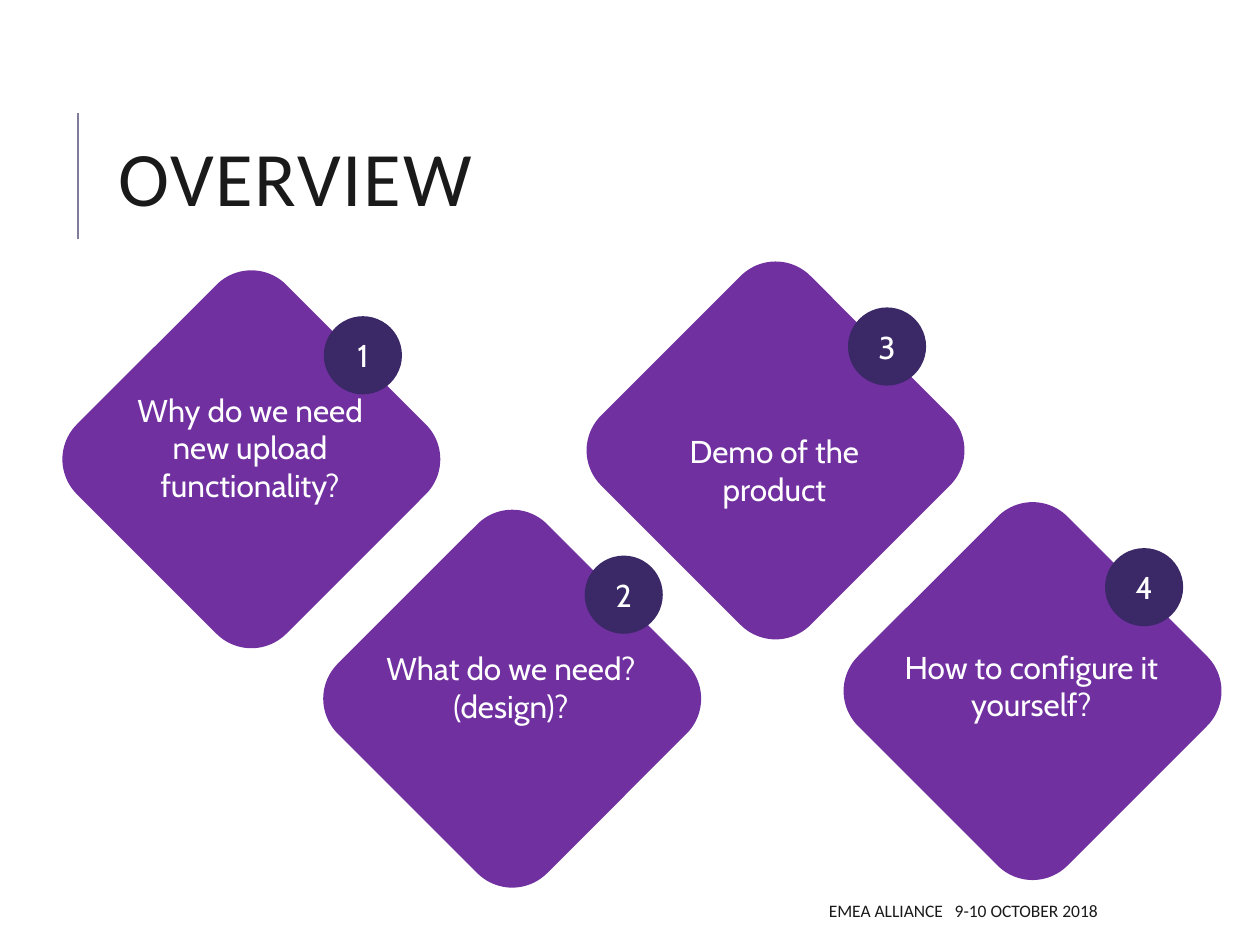
from dataclasses import dataclass

from pptx import Presentation
from pptx import util as u
from pptx.dml.color import RGBColor
from pptx.enum import shapes, text
from pptx.oxml.xmlchemy import OxmlElement


@dataclass(frozen=True)
class Theme:
    ink: str = "1A1A1A"
    rule: str = "7F7B99"
    diamond: str = "7030A0"
    badge: str = "3B2867"
    light: str = "FFFFFF"
    heading_font: str = "Calibri"
    body_font: str = "Cabin"
    title_size: float = 44
    body_size: float = 18
    footer_size: float = 10
    rule_width: float = 1.5


class SlideBuilder:
    """Draws styled elements on one slide, placed on a grid of 100 columns by 75 rows."""

    columns, rows = 100, 75

    def __init__(self, presentation, theme):
        self.theme = theme
        self.column = presentation.slide_width / self.columns
        self.row = presentation.slide_height / self.rows
        self.slide = presentation.slides.add_slide(presentation.slide_layouts[5])

    def box(self, left, top, width, height):
        return (round(left * self.column), round(top * self.row),
                round(width * self.column), round(height * self.row))

    def style(self, paragraph, font, size, color, alignment):
        paragraph.alignment = alignment
        paragraph.font.name = font
        paragraph.font.size = u.Pt(size)
        paragraph.font.color.rgb = RGBColor.from_string(color)

    def body(self, paragraph, words):
        paragraph.text = words
        self.style(paragraph, self.theme.body_font, self.theme.body_size,
                   self.theme.light, text.PP_ALIGN.CENTER)

    def track(self, run, points):
        run.font._element.set("spc", str(round(points * 100)))

    def title(self, words, *area):
        title = self.slide.shapes.title
        title.left, title.top, title.width, title.height = self.box(*area)
        frame = title.text_frame
        frame.text = words
        frame.auto_size = text.MSO_AUTO_SIZE.NONE
        frame.vertical_anchor = text.MSO_ANCHOR.MIDDLE
        paragraph = frame.paragraphs[0]
        paragraph.line_spacing = 0.8
        self.style(paragraph, self.theme.heading_font, self.theme.title_size,
                   self.theme.ink, text.PP_ALIGN.LEFT)
        self.track(paragraph.runs[0], 1)

    def rule(self, column, top, bottom):
        x, start, _, length = self.box(column, top, 0, bottom - top)
        line = self.slide.shapes.add_connector(
            shapes.MSO_CONNECTOR.STRAIGHT, x, start + length, x, start)
        line.line.color.rgb = RGBColor.from_string(self.theme.rule)
        line.line.width = u.Pt(self.theme.rule_width)
        line._element.spPr.append(OxmlElement("a:effectLst"))

    def shape(self, kind, color, *area):
        shape = self.slide.shapes.add_shape(kind, *self.box(*area))
        shape.shadow.inherit = False
        shape.fill.solid()
        shape.fill.fore_color.rgb = RGBColor.from_string(color)
        shape.line.fill.background()
        return shape

    def textbox(self, *area):
        frame = self.slide.shapes.add_textbox(*self.box(*area)).text_frame
        frame.word_wrap = True
        return frame

    def step(self, number, words, left, top, text_top, text_height):
        diamond = self.shape(shapes.MSO_SHAPE.ROUNDED_RECTANGLE, self.theme.diamond,
                             left, top, 23.5, 23.5)
        diamond.rotation = 45
        badge = self.shape(shapes.MSO_SHAPE.OVAL, self.theme.badge,
                           left + 17.5, top + 0.4, 6.2, 6.2)
        badge.text_frame.vertical_anchor = text.MSO_ANCHOR.MIDDLE
        self.body(badge.text_frame.paragraphs[0], str(number))
        label = self.textbox(left + 0.4, text_top, 22.5, text_height)
        label.auto_size = text.MSO_AUTO_SIZE.SHAPE_TO_FIT_TEXT
        self.body(label.paragraphs[0], words)

    def footer(self, event, date, *area):
        frame = self.textbox(*area)
        frame.vertical_anchor = text.MSO_ANCHOR.MIDDLE
        paragraph = frame.paragraphs[0]
        event_run, gap, date_run = (paragraph.add_run() for _ in range(3))
        event_run.text, gap.text, date_run.text = event, " ", date
        self.track(gap, 4.5)
        self.style(paragraph, self.theme.heading_font, self.theme.footer_size,
                   self.theme.ink, text.PP_ALIGN.RIGHT)


def main():
    presentation = Presentation()
    presentation.slide_width, presentation.slide_height = u.Inches(10), u.Inches(7.5)
    builder = SlideBuilder(presentation, Theme())
    builder.rule(6.2, 9, 19)
    builder.title("OVERVIEW", 8.4, 6.4, 79.7, 16.4)
    steps = [
        ("Why do we need new upload functionality?", 8.2, 24.7, 30.5, 10.1),
        ("What do we need? (design)?", 28.9, 43.7, 51, 7.1),
        ("Demo of the product", 49.8, 24, 33.8, 7.1),
        ("How to configure it yourself?", 70.2, 43.1, 50.9, 7.1),
    ]
    for number, step in enumerate(steps, 1):
        builder.step(number, *step)
    builder.footer("EMEA ALLIANCE", "9-10 OCTOBER 2018", 39.7, 70.8, 48.4, 3)
    presentation.save("out.pptx")


if __name__ == "__main__":
    main()
